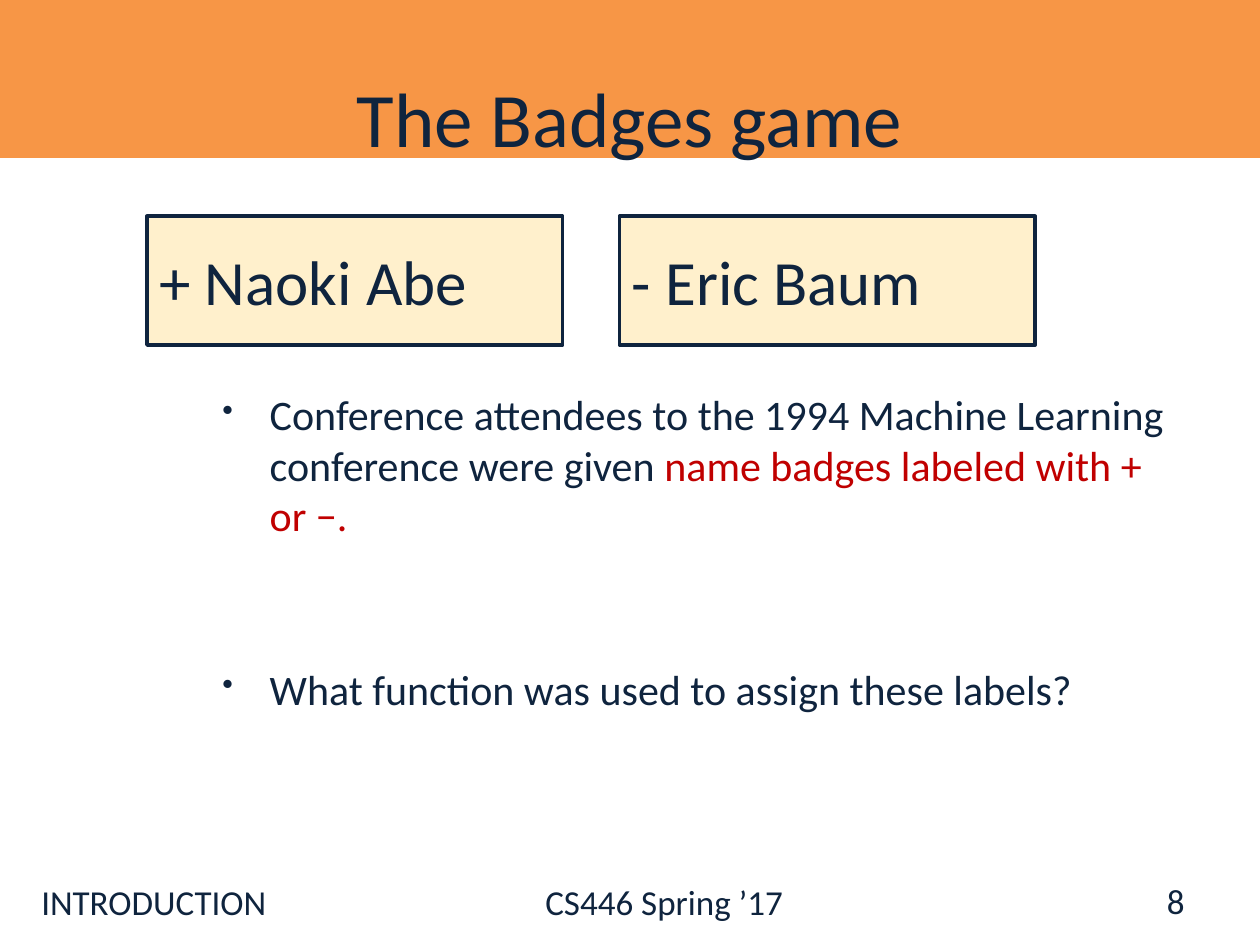
from pptx import Presentation
from pptx.dml.color import RGBColor
from pptx.enum.shapes import MSO_SHAPE
from pptx.enum.text import MSO_ANCHOR, PP_ALIGN
from pptx.oxml.ns import qn
from pptx.util import Pt
from lxml import etree

RECTANGLE = MSO_SHAPE.RECTANGLE
TOP, MIDDLE = MSO_ANCHOR.TOP, MSO_ANCHOR.MIDDLE
LEFT, CENTER, RIGHT = PP_ALIGN.LEFT, PP_ALIGN.CENTER, PP_ALIGN.RIGHT

NAVY = RGBColor(0x0F, 0x24, 0x3E)
ORANGE = RGBColor(0xF7, 0x96, 0x46)
CREAM = RGBColor(0xFF, 0xF0, 0xCC)
RED = RGBColor(0xC0, 0x00, 0x00)


class SlideWriter:
    """Draws styled elements on the current slide, with lengths in points."""

    font_name = "Calibri"
    indent = 27

    def __init__(self, page):
        self.page = page

    def style(self, para, size, align=LEFT):
        para.alignment = align
        para.font.name = self.font_name
        para.font.size = Pt(size)
        para.font.color.rgb = NAVY

    def rectangle(self, left, top, width, height, fill, line, line_width):
        box = self.page.shapes.add_shape(
            RECTANGLE, Pt(left), Pt(top), Pt(width), Pt(height))
        box.shadow.inherit = False
        box.fill.solid()
        box.fill.fore_color.rgb = fill
        box.line.color.rgb = line
        box.line.width = Pt(line_width)
        return box

    def badge(self, left, top, width, height, name):
        box = self.rectangle(left, top, width, height, CREAM, NAVY, 2)
        box.text_frame.vertical_anchor = MIDDLE
        para = box.text_frame.paragraphs[0]
        para.text = name
        self.style(para, 36)

    def frame(self, left, top, width, height, anchor=TOP):
        box = self.page.shapes.add_textbox(
            Pt(left), Pt(top), Pt(width), Pt(height))
        box.text_frame.word_wrap = True
        box.text_frame.vertical_anchor = anchor
        return box.text_frame

    def text(self, left, top, width, height, words, size,
             align=LEFT, anchor=TOP, tab=None):
        para = self.frame(left, top, width, height, anchor).paragraphs[0]
        para.text = words
        if tab:
            stops = etree.SubElement(para._p.get_or_add_pPr(), qn("a:tabLst"))
            etree.SubElement(stops, qn("a:tab"), pos=str(Pt(tab)), algn="l")
        self.style(para, size, align)

    def bullets(self, left, top, width, height, items, size, gap):
        frame = self.frame(left, top, width, height)
        for index, spans in enumerate(items):
            para = frame.add_paragraph() if index else frame.paragraphs[0]
            if index:
                para.space_before = Pt(gap)
            properties = para._p.get_or_add_pPr()
            properties.set("marL", str(Pt(self.indent)))
            properties.set("indent", str(-Pt(self.indent)))
            etree.SubElement(properties, qn("a:buSzPct"), val="75000")
            etree.SubElement(properties, qn("a:buChar"), char="•")
            self.style(para, size)
            for words, color in spans:
                span = para.add_run()
                span.text = words
                span.font.color.rgb = color


def main():
    deck = Presentation()
    deck.slide_width, deck.slide_height = Pt(720), Pt(540)
    writer = SlideWriter(deck.slides.add_slide(deck.slide_layouts[6]))

    writer.text(16.5, 499.7, 691, 40, "INTRODUCTION\tCS446 Spring ’17", 20, tab=288)
    writer.rectangle(0, 0, 720, 90, ORANGE, ORANGE, 0.75)
    writer.text(36, 21.6, 648, 90, "The Badges game", 44, CENTER, MIDDLE)

    writer.bullets(120, 218.7, 564, 263.7, [
        [("Conference attendees to the 1994 Machine Learning conference were given ", NAVY),
         ("name badges labeled with + or −.", RED)],
        [("What function was used to assign these labels?", NAVY)],
    ], 24, 70.4)

    for column, name in enumerate(["+ Naoki Abe", "- Eric Baum"]):
        writer.badge(84 + 270 * column, 123.6, 237.6, 73.6, name)

    writer.text(516, 500.4, 168, 28.8, "8", 20, RIGHT, MIDDLE)
    deck.save("out.pptx")


if __name__ == "__main__":
    main()
